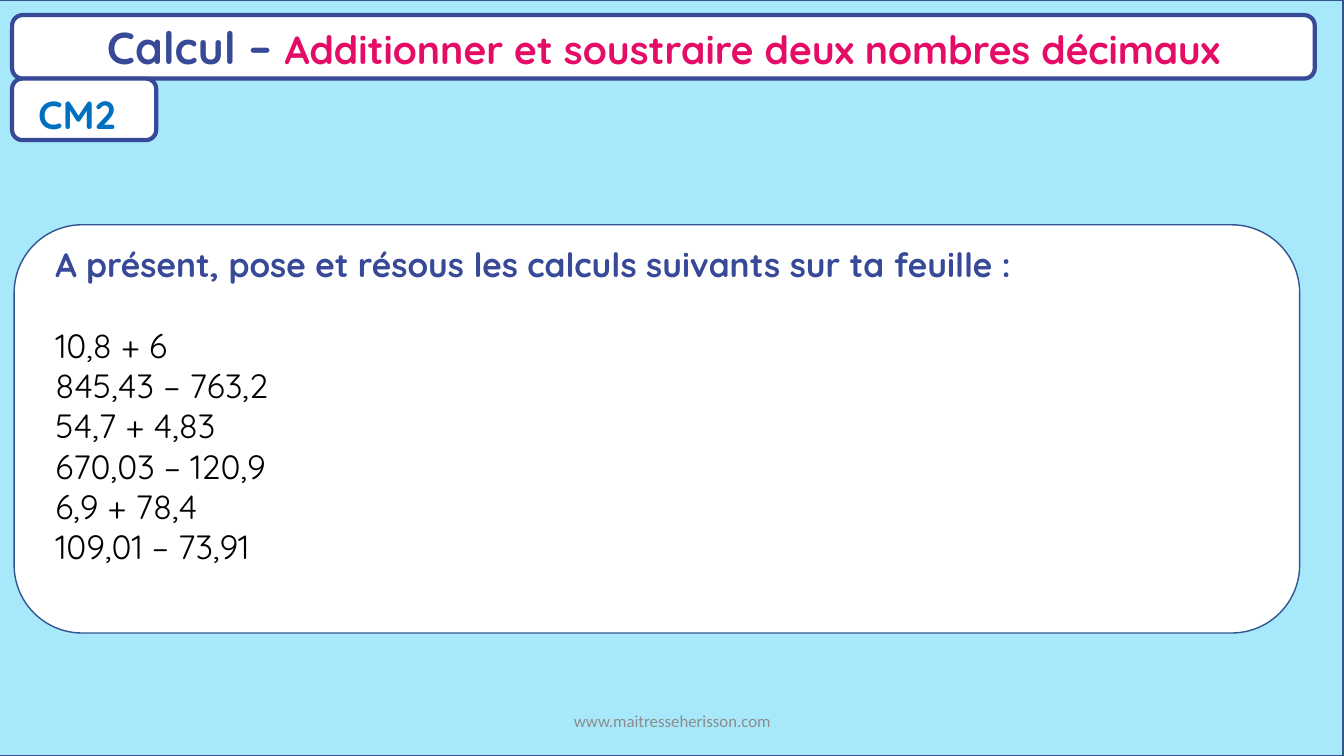
from pptx import Presentation
from pptx import util as u
from pptx.dml.color import RGBColor
from pptx.enum import shapes, text

COLORS = {
    "sky": "A7E8FB",
    "white": "FFFFFF",
    "outline": "325491",
    "indigo": "374997",
    "pink": "E50C67",
    "blue": "0070C0",
    "black": "000000",
    "grey": "8C8C8C",
}
CALCULATIONS = [
    "10,8 + 6",
    "845,43 – 763,2",
    "54,7 + 4,83",
    "670,03 – 120,9",
    "6,9 + 78,4",
    "109,01 – 73,91",
]


def color(name):
    return RGBColor.from_string(COLORS[name])


def add_run(paragraph, words, size=24, ink="black", bold=False, font="Quicksand"):
    run = paragraph.add_run()
    run.text = words
    run.font.name = font
    run.font.size = u.Pt(size)
    run.font.bold = bold
    run.font.color.rgb = color(ink)


class LessonSlide:
    """Holds the current slide and the style of its elements."""

    def __init__(self, presentation):
        self.slide = presentation.slides.add_slide(presentation.slide_layouts[6])

    def panel(self, left, top, width, height, fill="white", line="indigo",
              line_width=3, kind=shapes.MSO_SHAPE.ROUNDED_RECTANGLE):
        shape = self.slide.shapes.add_shape(
            kind, *map(u.Inches, (left, top, width, height)))
        shape.shadow.inherit = False
        shape.fill.solid()
        shape.fill.fore_color.rgb = color(fill)
        shape.line.color.rgb = color(line)
        shape.line.width = u.Pt(line_width)
        return shape

    def text_box(self, left, top, width, height, anchor=text.MSO_ANCHOR.TOP):
        """Add a wrapping text box and return its text frame."""
        frame = self.slide.shapes.add_textbox(
            *map(u.Inches, (left, top, width, height))).text_frame
        frame.word_wrap = True
        frame.vertical_anchor = anchor
        return frame


def main():
    presentation = Presentation()
    presentation.slide_width = u.Inches(13.33)
    presentation.slide_height = u.Inches(7.5)
    lesson = LessonSlide(presentation)

    lesson.panel(-0.01, 0, 13.33, 7.5, fill="sky", line="outline", line_width=1,
                 kind=shapes.MSO_SHAPE.RECTANGLE)
    lesson.panel(0.14, 2.23, 12.75, 4.05, line="outline", line_width=1)

    exercise = lesson.text_box(0.45, 2.37, 12.02, 3.33)
    add_run(exercise.paragraphs[0],
            "A présent, pose et résous les calculs suivants sur ta feuille :",
            ink="indigo", bold=True)
    for calculation in CALCULATIONS:
        add_run(exercise.add_paragraph(), calculation)
    exercise.paragraphs[1].space_before = u.Pt(29)

    footer = lesson.text_box(4.42, 6.95, 4.5, 0.4, anchor=text.MSO_ANCHOR.MIDDLE)
    website = footer.paragraphs[0]
    website.alignment = text.PP_ALIGN.CENTER
    add_run(website, "www.maitresseherisson.com", size=12, ink="grey", font="Calibri")

    header = lesson.panel(0.12, 0.15, 12.92, 0.63).text_frame
    header.vertical_anchor = text.MSO_ANCHOR.MIDDLE
    title = header.paragraphs[0]
    title.alignment = text.PP_ALIGN.CENTER
    add_run(title, "Calcul – ", size=32, ink="indigo", bold=True)
    add_run(title, "Additionner et soustraire deux nombres décimaux",
            size=28, ink="pink", bold=True)

    lesson.panel(0.12, 0.78, 1.43, 0.61)
    level = lesson.text_box(0.28, 0.85, 1.1, 0.57)
    add_run(level.paragraphs[0], "CM2", size=28, ink="blue", bold=True)

    presentation.save("out.pptx")


if __name__ == "__main__":
    main()
